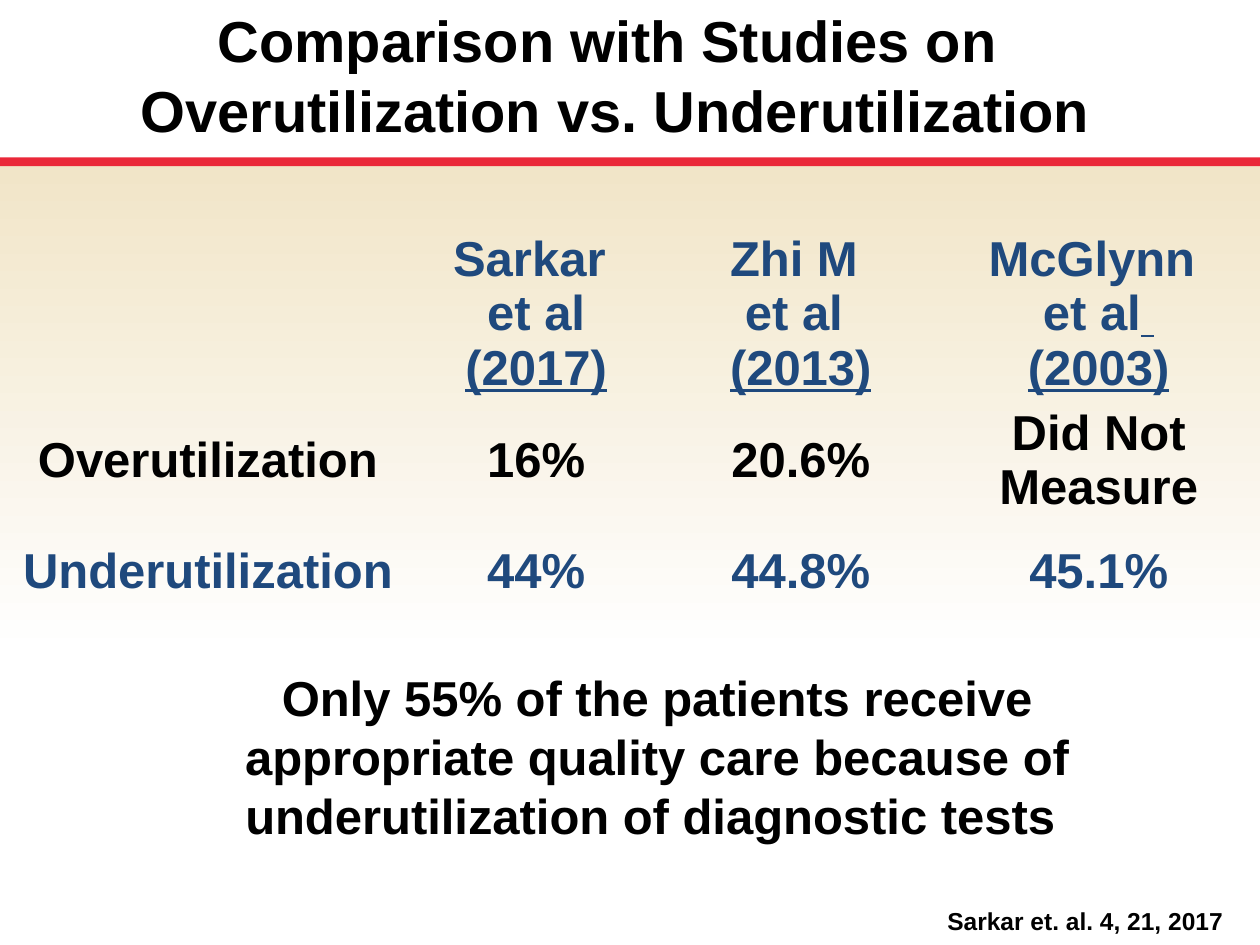
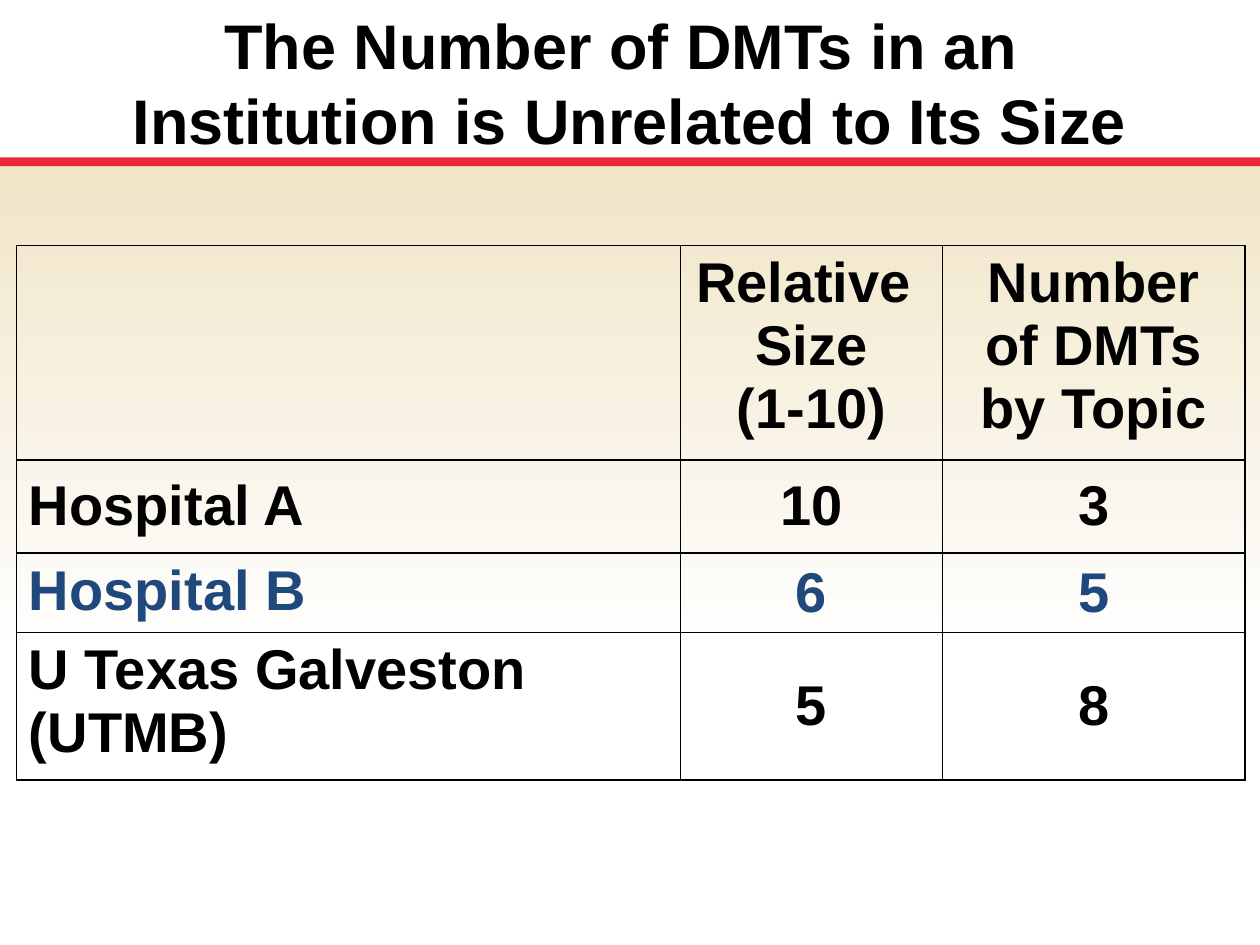
from lxml.etree import SubElement
from pptx import Presentation
from pptx.dml.color import RGBColor
from pptx.enum.shapes import MSO_SHAPE
from pptx.enum.text import MSO_ANCHOR, PP_ALIGN
from pptx.oxml.ns import qn
from pptx.util import Inches, Pt

FONT = "Arial"
BLACK, BLUE, RED = "000000", "1F497D", "EA2839"
TAN, WHITE = "F1E5C8", "FFFFFF"


def color(hex_string):
    return RGBColor.from_string(hex_string)


def format_paragraph(paragraph, size, hex_string=BLACK, align=PP_ALIGN.CENTER):
    paragraph.alignment = align
    font = paragraph.font
    font.name, font.size, font.bold = FONT, Pt(size), True
    font.color.rgb = color(hex_string)


def set_margins(target, horizontal, vertical):
    target.margin_left = target.margin_right = Inches(horizontal)
    target.margin_top = target.margin_bottom = Inches(vertical)


def write_lines(frame, lines, size, hex_string=BLACK, align=PP_ALIGN.CENTER):
    """Write one paragraph per line; a line may be a list of (text, underlined)."""
    for index, line in enumerate(lines):
        paragraph = frame.add_paragraph() if index else frame.paragraphs[0]
        for text, underlined in [(line, False)] if isinstance(line, str) else line:
            run = paragraph.add_run()
            run.text = text
            if underlined:
                run.font.underline = True
        format_paragraph(paragraph, size, hex_string, align)


def add_band(slide, top, height):
    band = slide.shapes.add_shape(MSO_SHAPE.RECTANGLE, 0, Inches(top),
                                  Inches(10), Inches(height))
    band.shadow.inherit = False
    band.line.fill.background()
    return band.fill


def add_titled_slide(presentation, lines, size, box, anchor, margins):
    slide = presentation.slides.add_slide(presentation.slide_layouts[5])

    # Fading background and red rule
    fade = add_band(slide, 1.32, 3.88)
    fade.gradient()
    fade.gradient_angle = 270
    for stop, hex_string in zip(fade.gradient_stops, (TAN, WHITE)):
        stop.color.rgb = color(hex_string)
    rule = add_band(slide, 1.25, 0.07)
    rule.solid()
    rule.fore_color.rgb = color(RED)

    # Title
    title = slide.shapes.title
    title.left, title.top, title.width, title.height = map(Inches, box)
    frame = title.text_frame
    frame.vertical_anchor = anchor
    frame.word_wrap = True
    set_margins(frame, *margins)
    write_lines(frame, lines, size)
    return slide


def add_text(slide, box, text, size, align=PP_ALIGN.CENTER, wrap=True):
    frame = slide.shapes.add_textbox(*map(Inches, box)).text_frame
    frame.word_wrap = wrap
    write_lines(frame, [text], size, align=align)


def set_borders(cell, hex_string):
    """Draw all four sides in a colour, or none if it is None."""
    properties = cell._tc.get_or_add_tcPr()
    for side in ("a:lnL", "a:lnR", "a:lnT", "a:lnB"):
        line = SubElement(properties, qn(side), w=str(Pt(1)))
        if hex_string is None:
            SubElement(line, qn("a:noFill"))
        else:
            fill = SubElement(line, qn("a:solidFill"))
            SubElement(fill, qn("a:srgbClr"), val=hex_string)


def add_table(slide, left, top, widths, heights, rows, row_colors, size, margins,
              border=None, label_align=PP_ALIGN.CENTER, top_cells=()):
    table = slide.shapes.add_table(
        len(rows), len(widths), Inches(left), Inches(top),
        Inches(sum(widths)), Inches(sum(heights))).table
    table.first_row = table.horz_banding = False
    for column, width in zip(table.columns, widths):
        column.width = Inches(width)
    for row, height in zip(table.rows, heights):
        row.height = Inches(height)
    for row_index, (values, row_color) in enumerate(zip(rows, row_colors)):
        for column_index, value in enumerate(values):
            cell = table.cell(row_index, column_index)
            set_borders(cell, border)
            cell.fill.background()
            set_margins(cell, *margins)
            at_top = (row_index, column_index) in top_cells
            cell.vertical_anchor = MSO_ANCHOR.TOP if at_top else MSO_ANCHOR.MIDDLE
            lines = [value] if isinstance(value, str) else value
            align = PP_ALIGN.CENTER if column_index else label_align
            write_lines(cell.text_frame, lines, size, row_color, align)


def build_comparison_slide(presentation):
    slide = add_titled_slide(
        presentation,
        ["Comparison with Studies on ", "Overutilization vs. Underutilization"],
        33, (0.65, 0.12, 8.47, 0.94), MSO_ANCHOR.MIDDLE, (0, 0))
    studies = [
        "",
        ["Sarkar ", "et al", [("(2017)", True)]],
        ["Zhi M ", "et al ", [("(2013)", True)]],
        ["McGlynn ", [("et al", False), (" ", True)], [("(2003)", True)]],
    ]
    rows = [
        studies,
        ["Overutilization", "16%", "20.6%", "Did Not Measure"],
        ["Underutilization", "44%", "44.8%", "45.1%"],
    ]
    add_table(slide, 0, 1.8, (3.3, 1.91, 2.29, 2.44), (1.38, 0.94, 0.81),
              rows, (BLUE, BLACK, BLUE), 28, (0.07, 0.04))
    add_text(slide, (1.81, 5.25, 6.81, 1.51),
             "Only 55% of the patients receive appropriate quality care "
             "because of underutilization of diagnostic tests ", 28)
    add_text(slide, (7.42, 7.14, 2.4, 0.34), "Sarkar et. al. 4, 21, 2017", 14,
             PP_ALIGN.LEFT, wrap=False)


def build_hospital_slide(presentation):
    slide = add_titled_slide(
        presentation,
        ["The Number of DMTs in an ", "Institution is Unrelated to Its Size"],
        36, (0.47, 0, 9.06, 1.31), MSO_ANCHOR.TOP, (0.1, 0.05))
    rows = [
        ["", ["Relative ", "Size", "(1-10)"], "Number of DMTs by Topic"],
        ["Hospital A", "10", "3"],
        ["Hospital B", "6", "5"],
        ["U Texas Galveston (UTMB)", "5", "8"],
    ]
    add_table(slide, 0.13, 1.95, (5.27, 2.08, 2.4), (1.7, 0.74, 0.63, 1.17),
              rows, (BLACK, BLACK, BLUE, BLACK), 32, (0.1, 0.05), border=BLACK,
              label_align=PP_ALIGN.LEFT,
              top_cells={(0, 0), (0, 1), (0, 2), (2, 0), (3, 0)})


def main():
    presentation = Presentation()
    presentation.slide_width = Inches(10)
    presentation.slide_height = Inches(7.5)
    build_comparison_slide(presentation)
    build_hospital_slide(presentation)
    presentation.save("out.pptx")


if __name__ == "__main__":
    main()
